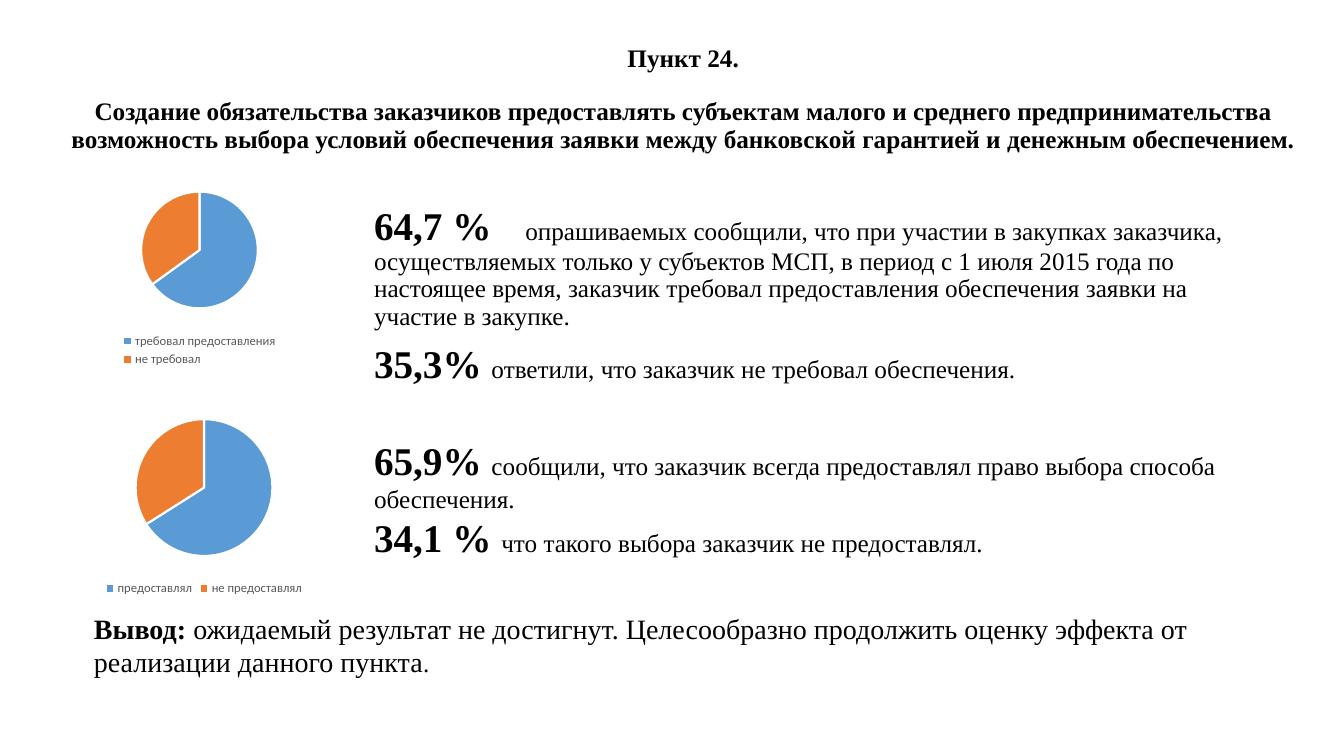
from dataclasses import dataclass
from pptx import Presentation
from pptx.chart.data import CategoryChartData
from pptx.dml.color import RGBColor
from pptx.enum.chart import XL_CHART_TYPE, XL_LEGEND_POSITION
from pptx.enum.text import MSO_ANCHOR, MSO_AUTO_SIZE, PP_ALIGN
from pptx.oxml.ns import qn
from pptx.util import Pt
from lxml.etree import SubElement


@dataclass(frozen=True)
class Theme:
    text_font: str = "Times New Roman"
    chart_font: str = "Calibri"
    ink: RGBColor = RGBColor(0, 0, 0)
    legend_ink: RGBColor = RGBColor(0x59, 0x59, 0x59)
    gap: RGBColor = RGBColor(0xFF, 0xFF, 0xFF)
    yes: RGBColor = RGBColor(0x5B, 0x9B, 0xD5)
    no: RGBColor = RGBColor(0xED, 0x7D, 0x31)
    figure: Pt = Pt(28)
    body: Pt = Pt(18)
    conclusion: Pt = Pt(20)
    legend: Pt = Pt(9)


theme = Theme()


def apply_format(target, values):
    for name, value in values.items():
        setattr(target, name, value)


def write_paragraph(frame, first, runs, layout):
    paragraph = frame.paragraphs[0] if first else frame.add_paragraph()
    apply_format(paragraph, layout)
    for text, size, bold in runs:
        run = paragraph.add_run()
        run.text = text
        apply_format(run.font, {"name": theme.text_font, "size": size, "bold": bold})
        run.font.color.rgb = theme.ink
    return paragraph


deck = Presentation()
apply_format(deck, {"slide_width": Pt(960), "slide_height": Pt(540)})
slide = deck.slides.add_slide(deck.slide_layouts[1])

# Text areas
heading = slide.shapes.title
findings = slide.placeholders[1]
conclusion = slide.shapes.add_textbox(0, 0, 0, 0)
areas = [
    (heading, (35, 19.5, 906, 103), MSO_ANCHOR.MIDDLE),
    (findings, (260, 144, 651, 274), MSO_ANCHOR.TOP),
    (conclusion, (60, 433, 851, 55.5), MSO_ANCHOR.TOP),
]
for area, box, anchor in areas:
    apply_format(area, dict(zip(("left", "top", "width", "height"), map(Pt, box))))
    apply_format(area.text_frame, {
        "word_wrap": True,
        "auto_size": MSO_AUTO_SIZE.NONE,
        "vertical_anchor": anchor,
    })

# Heading
heading_lines = [
    ("Пункт 24.", 0),
    ("Создание обязательства заказчиков предоставлять субъектам малого и среднего "
     "предпринимательства возможность выбора условий обеспечения заявки между "
     "банковской гарантией и денежным обеспечением.", 19),
]
for index, (line, before) in enumerate(heading_lines):
    write_paragraph(heading.text_frame, index == 0, [(line, theme.body, True)], {
        "alignment": PP_ALIGN.CENTER, "line_spacing": 0.9, "space_before": Pt(before)})

# Survey findings: figure, statement, line spacing, space before
survey = [
    ("64,7 %\t",
     "опрашиваемых сообщили, что при участии в закупках заказчика, осуществляемых "
     "только у субъектов МСП, в период с 1 июля 2015 года по настоящее время, заказчик "
     "требовал предоставления обеспечения заявки на участие в закупке.", 0.9, 10),
    ("35,3% ", "ответили, что заказчик не требовал обеспечения.", 0.9, 10),
    ("65,9% ", "сообщили, что заказчик всегда предоставлял право выбора способа "
     "обеспечения.", 1.0, 35),
    ("34,1 % ", "что такого выбора заказчик не предоставлял.", 1.0, 0),
]
for index, (figure, statement, spacing, before) in enumerate(survey):
    runs = [(figure, theme.figure, True), (statement, theme.body, False)]
    finding = write_paragraph(findings.text_frame, index == 0, runs, {
        "line_spacing": spacing, "space_before": Pt(before)})
    properties = finding._p.get_or_add_pPr()
    properties.set("marL", "0")
    properties.set("indent", "0")
    SubElement(properties, qn("a:buNone"))
    if "\t" in figure:
        stops = SubElement(properties, qn("a:tabLst"))
        SubElement(stops, qn("a:tab"), pos=str(Pt(105)), algn="l")

# Conclusion
write_paragraph(conclusion.text_frame, True, [
    ("Вывод:", theme.conclusion, True),
    (" ожидаемый результат не достигнут. Целесообразно продолжить оценку эффекта от "
     "реализации данного пункта", theme.conclusion, False),
    (".", theme.body, False),
], {})

# Pie charts
pies = [
    ((43, 127, 199, 138), {"требовал предоставления": 65, "не требовал": 35}),
    ((60, 289.5, 171.5, 139), {"предоставлял": 66, "не предоставлял": 34}),
]
for box, shares in pies:
    answers = CategoryChartData()
    answers.categories = list(shares)
    answers.add_series("Доля ответов", list(shares.values()))
    pie = slide.shapes.add_chart(XL_CHART_TYPE.PIE, *map(Pt, box), answers).chart
    apply_format(pie, {"has_title": False, "has_legend": True})
    apply_format(pie.legend, {
        "position": XL_LEGEND_POSITION.BOTTOM, "include_in_layout": False})
    apply_format(pie.legend.font, {"name": theme.chart_font, "size": theme.legend})
    pie.legend.font.color.rgb = theme.legend_ink
    pie.plots[0].vary_by_categories = True
    for index, colour in enumerate((theme.yes, theme.no)):
        slice_format = pie.plots[0].series[0].points[index].format
        slice_format.fill.solid()
        slice_format.fill.fore_color.rgb = colour
        slice_format.line.color.rgb = theme.gap
        slice_format.line.width = Pt(1.5)

deck.save("out.pptx")
